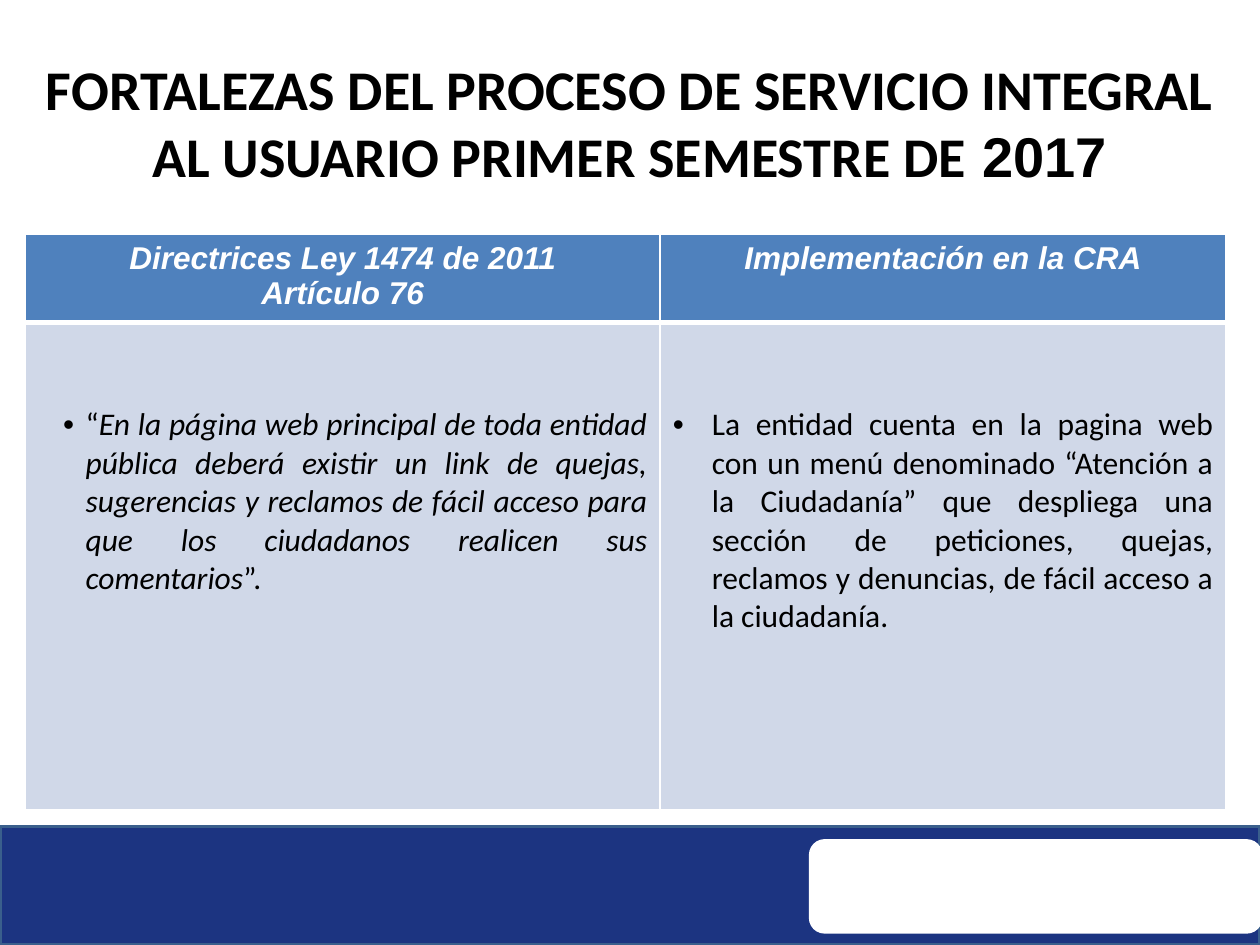
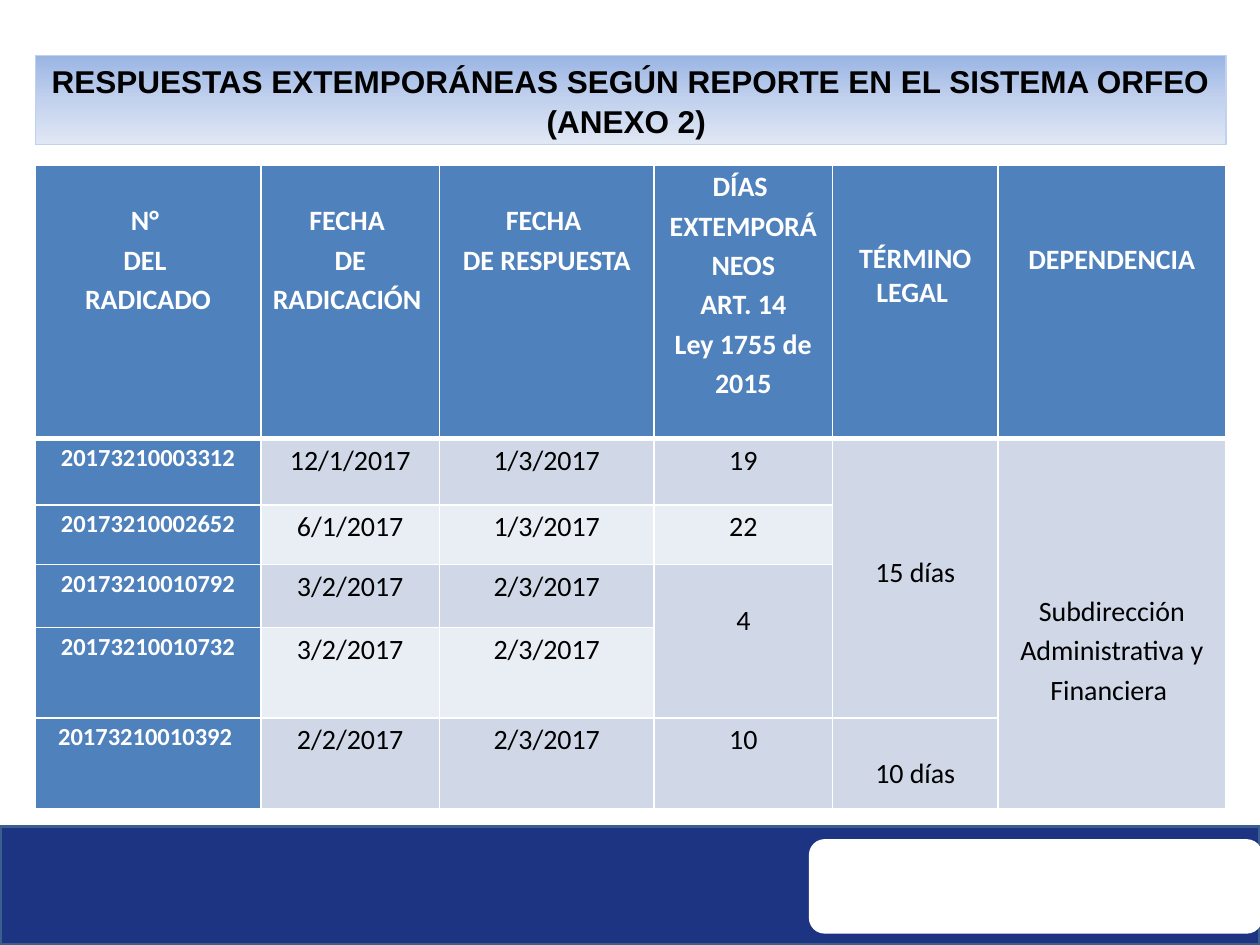
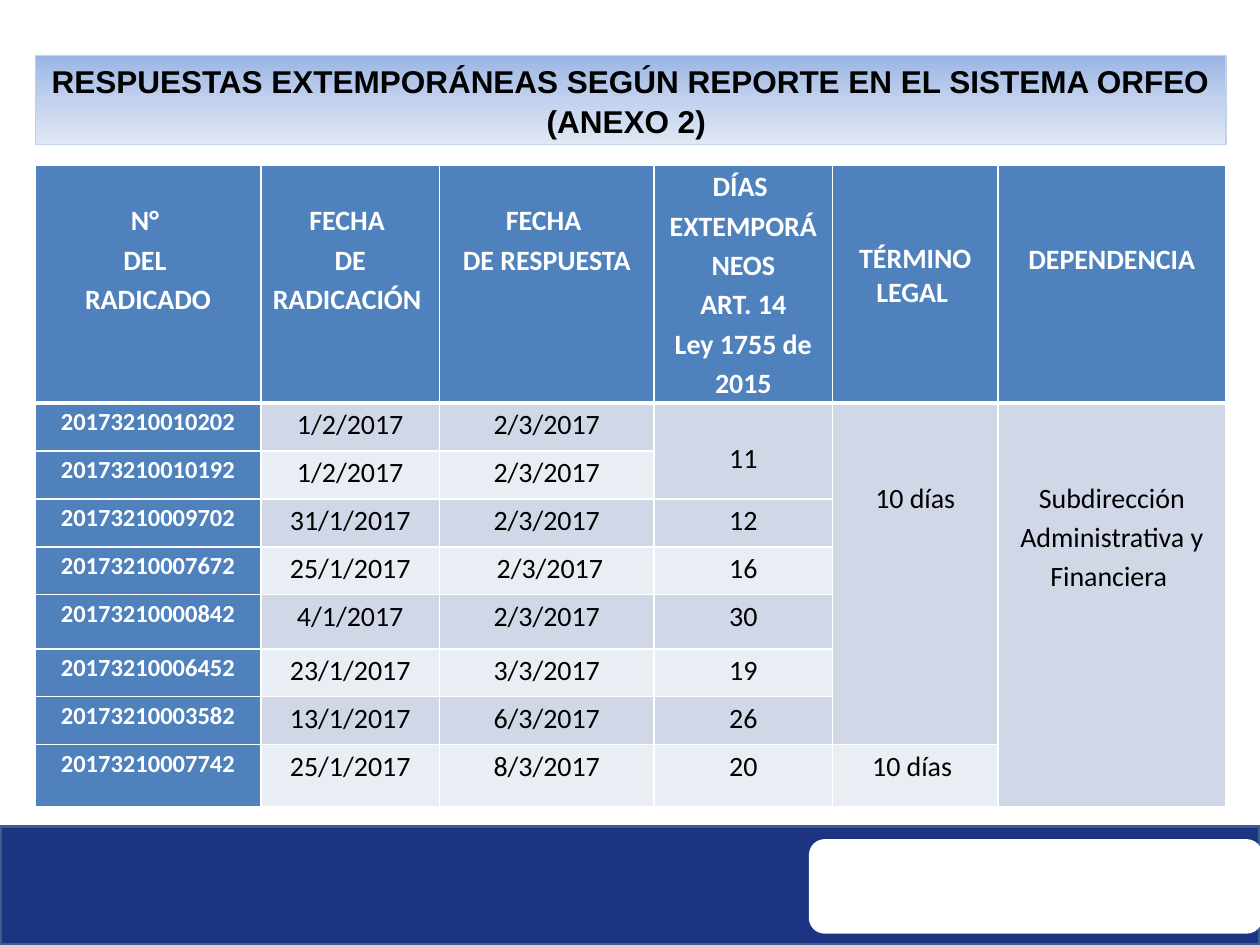
from copy import deepcopy

from pptx import Presentation
from pptx.dml.color import RGBColor
from pptx.enum.shapes import MSO_SHAPE
from pptx.enum.text import MSO_ANCHOR, PP_ALIGN
from pptx.oxml import parse_xml
from pptx.oxml.ns import nsdecls, qn
from pptx.util import Inches, Pt

RECT, ROUND = MSO_SHAPE.RECTANGLE, MSO_SHAPE.ROUNDED_RECTANGLE
CENTER, JUSTIFY = PP_ALIGN.CENTER, PP_ALIGN.JUSTIFY
TOP, MIDDLE = MSO_ANCHOR.TOP, MSO_ANCHOR.MIDDLE

WHITE = RGBColor(0xFF, 0xFF, 0xFF)
BLACK = RGBColor(0, 0, 0)
NAVY = RGBColor(0x1C, 0x34, 0x81)
EDGE = RGBColor(0x3A, 0x5F, 0x8C)
BLUE = RGBColor(0x4F, 0x81, 0xBD)
ROW_ODD = RGBColor(0xD0, 0xD8, 0xE8)
ROW_EVEN = RGBColor(0xE9, 0xED, 0xF4)
SKY = RGBColor(0x9A, 0xB5, 0xE4)
MIST = RGBColor(0xC2, 0xD1, 0xED)
PALE = RGBColor(0xE1, 0xE8, 0xF5)

# Text looks
TITLE = dict(name="Calibri", size=Pt(32), bold=True, color=BLACK)
BAND = dict(name="Arial", size=Pt(18), bold=True, color=BLACK)
LAW_HEAD = dict(BAND, italic=True, color=WHITE)
LAW_BODY = dict(name="Calibri", size=Pt(18), bold=False, color=BLACK)
HEAD = dict(name="Calibri", size=Pt(16), bold=True, color=WHITE)
CODE = dict(HEAD, size=Pt(14))
DATA = dict(HEAD, bold=False, color=BLACK)

# Report tables: a cell is (text, lines left free above, rows spanned) or plain text
COLS = [1.79, 1.42, 1.7, 1.42, 1.31, 1.81]
HEADS = [
    (["N° ", "DEL ", "RADICADO"], 1),
    (["FECHA ", "DE RADICACIÓN "], 1),
    (["FECHA ", "DE RESPUESTA"], 1),
    (["DÍAS ", "EXTEMPORÁNEOS", "ART. 14", "Ley 1755 de 2015"], 0),
    (["TÉRMINO LEGAL "], 2),
    (["DEPENDENCIA"], 2),
]
OFFICE = "Subdirección Administrativa y Financiera "
REPORT_A = [
    ["20173210003312", "12/1/2017", "1/3/2017", "19", ("15 días", 3, 4), (OFFICE, 4, 5)],
    ["20173210002652", "6/1/2017", "1/3/2017", "22"],
    ["20173210010792", "3/2/2017", "2/3/2017", ("4", 1, 2)],
    ["20173210010732", "3/2/2017", "2/3/2017"],
    ["20173210010392 ", "2/2/2017", "2/3/2017", "10", ("10 días", 1, 1)],
]
REPORT_B = [
    ["20173210010202", "1/2/2017", "2/3/2017", ("11", 1, 2), ("10 días", 2, 7), (OFFICE, 2, 8)],
    ["20173210010192", "1/2/2017", "2/3/2017"],
    ["20173210009702", "31/1/2017", "2/3/2017", "12"],
    ["20173210007672", "25/1/2017", " 2/3/2017", "16"],
    ["20173210000842", "4/1/2017", "2/3/2017", "30"],
    ["20173210006452", "23/1/2017", "3/3/2017", "19"],
    ["20173210003582", "13/1/2017", "6/3/2017", "26"],
    ["20173210007742", "25/1/2017", "8/3/2017", "20", "10 días "],
]


def inches(box):
    return [Inches(v) for v in box]


def set_font(font, look):
    for key, value in look.items():
        if key == "color":
            font.color.rgb = value
        else:
            setattr(font, key, value)


def write(frame, lines, look, align=CENTER, space=None):
    """Fill a frame; a line is text or a list of (text, changes to the look)."""
    frame.word_wrap = True
    for i, line in enumerate(lines):
        para = frame.add_paragraph() if i else frame.paragraphs[0]
        para.alignment = align
        if space:
            para.line_spacing = space
        for text, extra in [(line, {})] if isinstance(line, str) else line:
            run = para.add_run()
            run.text = text
            set_font(run.font, {**look, **extra})


def add_bullet(para, left, hang):
    props = para._p.get_or_add_pPr()
    props.set("marL", str(Inches(left)))
    props.set("indent", str(-Inches(hang)))
    for mark in ('buFont {} typeface="Arial"', 'buChar {} char="•"'):
        props.append(parse_xml(f"<a:{mark.format(nsdecls('a'))}/>"))


def add_box(slide, kind, box, fill=None, line=None, width=1):
    shape = slide.shapes.add_shape(kind, *inches(box))
    shape.shadow.inherit = False
    if fill is not None:
        shape.fill.solid()
        shape.fill.fore_color.rgb = fill
    if line is None:
        shape.line.fill.background()
    else:
        shape.line.color.rgb = line
        shape.line.width = Pt(width)
    return shape


def add_grid(slide, left, top, cols, rows):
    size = inches((left, top, sum(cols), sum(rows)))
    table = slide.shapes.add_table(len(rows), len(cols), *size).table
    table.first_row = table.horz_banding = False
    for col, width in zip(table.columns, cols):
        col.width = Inches(width)
    for row, height in zip(table.rows, rows):
        row.height = Inches(height)
    return table


def paint(cell, fill, margins, low=1):
    """Give a cell its fill, margins and white borders; low is the bottom one."""
    cell.fill.solid()
    cell.fill.fore_color.rgb = fill
    for side, value in zip(("left", "top", "right", "bottom"), margins):
        setattr(cell, "margin_" + side, Inches(value))
    props = cell._tc.get_or_add_tcPr()
    for i, (side, width) in enumerate(zip("LRTB", (1, 1, 1, low))):
        props.insert(i, parse_xml(
            f'<a:ln{side} {nsdecls("a")} w="{Pt(width)}"><a:solidFill>'
            f'<a:srgbClr val="{WHITE}"/></a:solidFill></a:ln{side}>'))


def add_footer(slide, top=6.56):
    add_box(slide, RECT, (0, top, 10, 0.94), NAVY, EDGE, 2)
    add_box(slide, ROUND, (6.42, top + 0.1, 3.6, 0.75), WHITE)


def new_slide(deck):
    slide = deck.slides.add_slide(deck.slide_layouts[6])
    add_footer(slide)
    return slide


def add_title(slide, box):
    frame = slide.shapes.add_textbox(*inches(box)).text_frame
    frame.vertical_anchor = TOP
    text = "FORTALEZAS DEL PROCESO DE SERVICIO INTEGRAL AL USUARIO PRIMER SEMESTRE DE"
    write(frame, [[(text, {}), (" 2017", {"name": "Arial"})]], TITLE)


def add_law(slide, left, top):
    """Table of the law's directives and how they are met."""
    table = add_grid(slide, left, top, [5.04, 4.49], [0.7, 3.87])
    heads = [["Directrices Ley 1474 de 2011", "Artículo 76"], ["Implementación en la CRA"]]
    quote = [("“", {}),
             ("En la página web principal de toda entidad pública deberá existir un link "
              "de quejas, sugerencias y reclamos de fácil acceso para que los ciudadanos "
              "realicen sus comentarios", {"italic": True}),
             ("”.", {})]
    answer = ("La entidad cuenta en la pagina web con un menú denominado “Atención a la "
              "Ciudadanía” que despliega una sección de peticiones, quejas, reclamos y "
              "denuncias, de fácil acceso a la ciudadanía.")
    bodies = [(quote, 0.38, 0.18), (answer, 0.31, 0.31)]
    for c, (head, (body, indent, hang)) in enumerate(zip(heads, bodies)):
        cell = table.cell(0, c)
        paint(cell, BLUE, (0.1, 0.05, 0.1, 0.05), 3)
        write(cell.text_frame, head, LAW_HEAD)
        cell = table.cell(1, c)
        paint(cell, ROW_ODD, (0.1, 0.66, 0.1, 0.05))
        add_bullet(cell.text_frame.paragraphs[0], indent, hang)
        write(cell.text_frame, [body], LAW_BODY, JUSTIFY)


def add_band(slide, box):
    """Heading on a gradient band."""
    band = add_box(slide, RECT, box, line=MIST, width=0.75)
    band.fill.gradient()
    band.fill.gradient_angle = 270
    stop = band._element.spPr.find(".//" + qn("a:gs"))
    stop.addnext(deepcopy(stop))
    for stop, place, color in zip(band.fill.gradient_stops, (0, 0.5, 1), (SKY, MIST, PALE)):
        stop.position = place
        stop.color.rgb = color
    band.text_frame.vertical_anchor = MIDDLE
    write(band.text_frame,
          ["RESPUESTAS EXTEMPORÁNEAS SEGÚN REPORTE EN EL SISTEMA ORFEO", "(ANEXO 2) "],
          BAND, space=1.06)


def drop(count):
    """Height of the lines left free at the top of a cell."""
    return 0.27 + 0.31 * (count - 1) if count else 0


def add_report(slide, left, top, heights, records):
    table = add_grid(slide, left, top, COLS, heights)
    # Header row
    for c, (lines, free) in enumerate(HEADS):
        cell = table.cell(0, c)
        legal = c == 4
        paint(cell, BLUE, (0.07, 0.61 if legal else drop(free), 0.07, 0), 3)
        write(cell.text_frame, lines, HEAD, space=None if legal else 1.15)
    # Data rows
    for r, record in enumerate(records, 1):
        band = ROW_ODD if r % 2 else ROW_EVEN
        for c, item in enumerate(record):
            text, free, span = (item, 0, 1) if isinstance(item, str) else item
            cell = table.cell(r, c)
            if span > 1:
                cell.merge(table.cell(r + span - 1, c))
            for k in range(span):
                paint(table.cell(r + k, c), band if c else BLUE, (0.07, drop(free) if k == 0 else 0, 0.07, 0))
            write(cell.text_frame, [text], DATA if c else CODE, space=1.15)


def law_slide(deck):
    slide = new_slide(deck)
    add_title(slide, (0, 0.38, 10, 1.18))
    add_law(slide, 0.2, 1.86)


def report_slide(deck, heights, records):
    slide = new_slide(deck)
    add_report(slide, 0.28, 1.31, heights, records)
    add_band(slide, (0.28, 0.44, 9.45, 0.71))


def main():
    deck = Presentation()
    deck.slide_width, deck.slide_height = Inches(10), Inches(7.5)
    law_slide(deck)
    report_slide(deck, [2.17, 0.53, 0.47, 0.5, 0.72, 0.72], REPORT_A)
    report_slide(deck, [1.89] + [0.38] * 4 + [0.43, 0.38, 0.38, 0.49], REPORT_B)
    deck.save("out.pptx")


if __name__ == "__main__":
    main()
